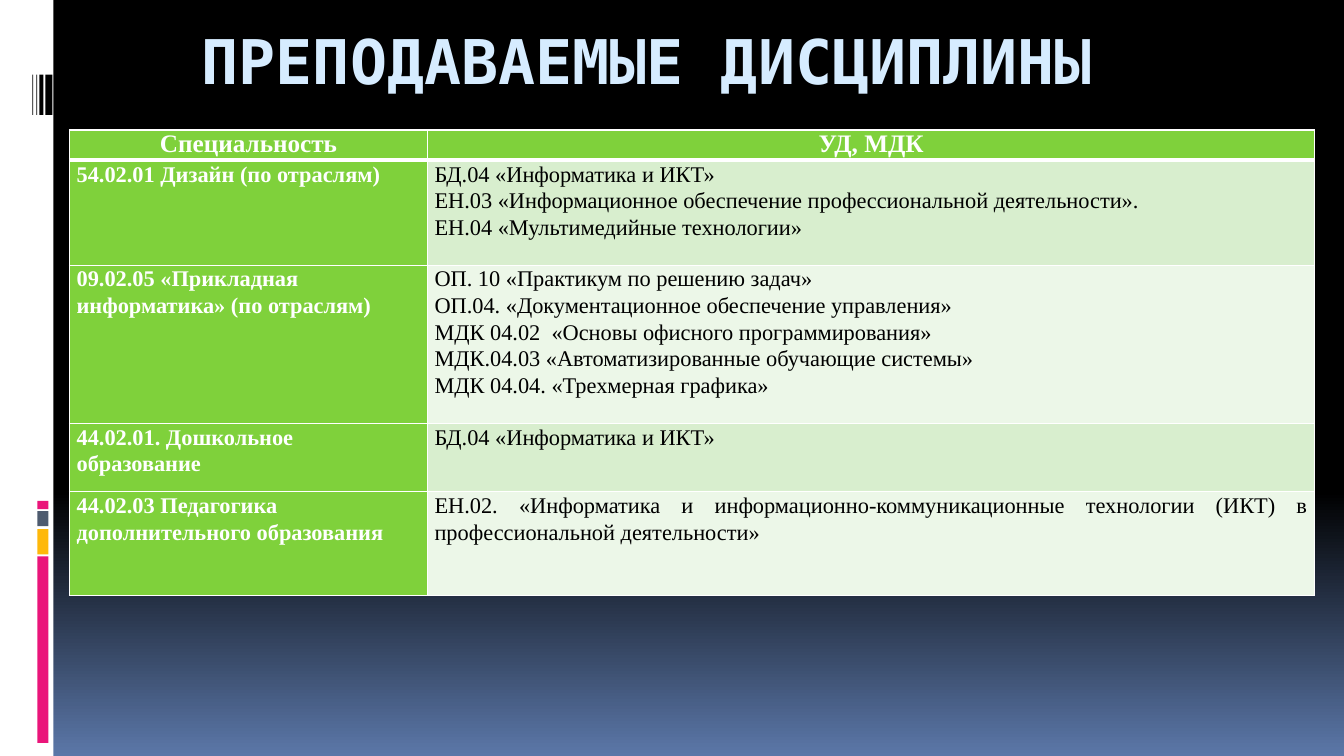
import dataclasses

import pptx
import pptx.dml.color
import pptx.enum.shapes
import pptx.enum.text
import pptx.oxml
import pptx.oxml.ns
import pptx.util

Inches = pptx.util.Inches
Align = pptx.enum.text.PP_ALIGN
Anchor = pptx.enum.text.MSO_ANCHOR


@dataclasses.dataclass(frozen=True)
class Theme:
    white: str = "FFFFFF"
    black: str = "000000"
    dusk: str = "5B77A8"
    title: str = "D6ECFF"
    pink: str = "EA157A"
    amber: str = "FEB80A"
    slate: str = "4E5B6F"
    green: str = "7FD13B"
    bands: tuple = ("D8EECE", "ECF7E8")
    title_font: str = "DejaVu Sans Mono"
    table_font: str = "Times New Roman"
    title_size: int = 44
    header_size: int = 18
    body_size: int = 16
    rule: int = 1
    header_rule: int = 3


THEME = Theme()

COLUMN_WIDTHS = (3.55, 8.8)
ROW_HEIGHTS = (0.28, 1.04, 1.57, 0.68, 1.03)
HEADINGS = ("Специальность", "УД, МДК")
SPECIALTIES = (
    ("54.02.01 Дизайн (по отраслям)", (
        "БД.04 «Информатика и ИКТ»",
        "ЕН.03 «Информационное обеспечение профессиональной деятельности».",
        "ЕН.04 «Мультимедийные технологии»",
    )),
    ("09.02.05 «Прикладная информатика» (по отраслям)", (
        "ОП. 10 «Практикум по решению задач»",
        "ОП.04. «Документационное обеспечение управления»",
        "МДК 04.02  «Основы офисного программирования»",
        "МДК.04.03 «Автоматизированные обучающие системы»",
        "МДК 04.04. «Трехмерная графика»",
    )),
    ("44.02.01. Дошкольное образование", ("БД.04 «Информатика и ИКТ»",)),
    ("44.02.03 Педагогика дополнительного образования", (
        "ЕН.02. «Информатика и информационно-коммуникационные технологии "
        "(ИКТ) в профессиональной деятельности»",
    )),
)


def rgb(value):
    return pptx.dml.color.RGBColor.from_string(value)


def write_text(frame, lines, *, font, size, color, bold=False,
               align=Align.LEFT, spacing=1.0):
    for index, line in enumerate(lines):
        paragraph = frame.add_paragraph() if index else frame.paragraphs[0]
        paragraph.alignment = align
        paragraph.line_spacing = spacing
        run = paragraph.add_run()
        run.text = line
        run.font.name = font
        run.font.size = pptx.util.Pt(size)
        run.font.bold = bold
        run.font.color.rgb = rgb(color)


def add_block(slide, left, top, width, height, color):
    block = slide.shapes.add_shape(
        pptx.enum.shapes.MSO_SHAPE.RECTANGLE,
        Inches(left), Inches(top), Inches(width), Inches(height))
    block.shadow.inherit = False
    block.fill.solid()
    block.fill.fore_color.rgb = rgb(color)
    block.line.fill.background()


def paint_background(slide):
    fill = slide.background.fill
    fill.gradient()
    fill.gradient_angle = 270
    stops = ((0.65, THEME.black), (1, THEME.dusk))
    for stop, (position, color) in zip(fill.gradient_stops, stops):
        stop.position = position
        stop.color.rgb = rgb(color)


def add_side_strip(slide, left, top, width, height):
    add_block(slide, left, top, width, height, THEME.white)
    for offset, bar_width in ((0.45, 0.07), (0.39, 0.04), (0.36, 0.01), (0.32, 0.01)):
        add_block(slide, left + offset, top + 0.74, bar_width, 0.4, THEME.black)
    for offset, bar_height, color in (
            (5.52, 1.85, THEME.pink), (5.25, 0.25, THEME.amber),
            (5.07, 0.15, THEME.slate), (4.97, 0.08, THEME.pink)):
        add_block(slide, left + 0.37, top + offset, 0.11, bar_height, color)


def add_title(slide, left, top, width, height):
    title = slide.shapes.add_textbox(
        Inches(left), Inches(top), Inches(width), Inches(height))
    title.text_frame.word_wrap = True
    title.text_frame.vertical_anchor = Anchor.MIDDLE
    write_text(title.text_frame, ["ПРЕПОДАВАЕМЫЕ ДИСЦИПЛИНЫ"],
               font=THEME.title_font, size=THEME.title_size,
               color=THEME.title, bold=True, align=Align.CENTER)


def set_borders(cell, **widths):
    properties = cell._tc.get_or_add_tcPr()
    for side in "LRTB":
        width = pptx.util.Pt(widths.get(side, THEME.rule))
        properties.append(pptx.oxml.parse_xml(
            f'<a:ln{side} {pptx.oxml.ns.nsdecls("a")} w="{width}"><a:solidFill>'
            f'<a:srgbClr val="{THEME.white}"/></a:solidFill></a:ln{side}>'))


def fill_cell(cell, lines, fill, borders, **text_format):
    cell.margin_left = cell.margin_right = Inches(0.07)
    cell.margin_top = cell.margin_bottom = 0
    set_borders(cell, **borders)
    cell.fill.solid()
    cell.fill.fore_color.rgb = rgb(fill)
    write_text(cell.text_frame, lines, font=THEME.table_font, **text_format)


def add_disciplines(slide, left, top, width, height):
    table = slide.shapes.add_table(
        len(ROW_HEIGHTS), len(COLUMN_WIDTHS),
        Inches(left), Inches(top), Inches(width), Inches(height)).table
    for column, column_width in zip(table.columns, COLUMN_WIDTHS):
        column.width = Inches(column_width)
    for row, row_height in zip(table.rows, ROW_HEIGHTS):
        row.height = Inches(row_height)
    for index, heading in enumerate(HEADINGS):
        fill_cell(table.cell(0, index), [heading], THEME.green,
                  {"B": THEME.header_rule}, size=THEME.header_size,
                  color=THEME.white, bold=True, align=Align.CENTER)
    for index, (specialty, disciplines) in enumerate(SPECIALTIES):
        borders = {} if index else {"T": THEME.header_rule}
        fill_cell(table.cell(index + 1, 0), [specialty], THEME.green, borders,
                  size=THEME.body_size, color=THEME.white, bold=True, spacing=1.07)
        fill_cell(table.cell(index + 1, 1), disciplines,
                  THEME.bands[index % 2], borders, size=THEME.body_size,
                  color=THEME.black, align=Align.JUSTIFY, spacing=1.07)


def main():
    presentation = pptx.Presentation()
    presentation.slide_width = Inches(13.33)
    presentation.slide_height = Inches(7.5)
    slide = presentation.slides.add_slide(presentation.slide_layouts[6])
    paint_background(slide)
    add_side_strip(slide, 0, 0, 0.53, 7.5)
    add_title(slide, 0.69, 0.14, 11.46, 0.91)
    add_disciplines(slide, 0.69, 1.29, sum(COLUMN_WIDTHS), sum(ROW_HEIGHTS))
    presentation.save("out.pptx")


if __name__ == "__main__":
    main()
